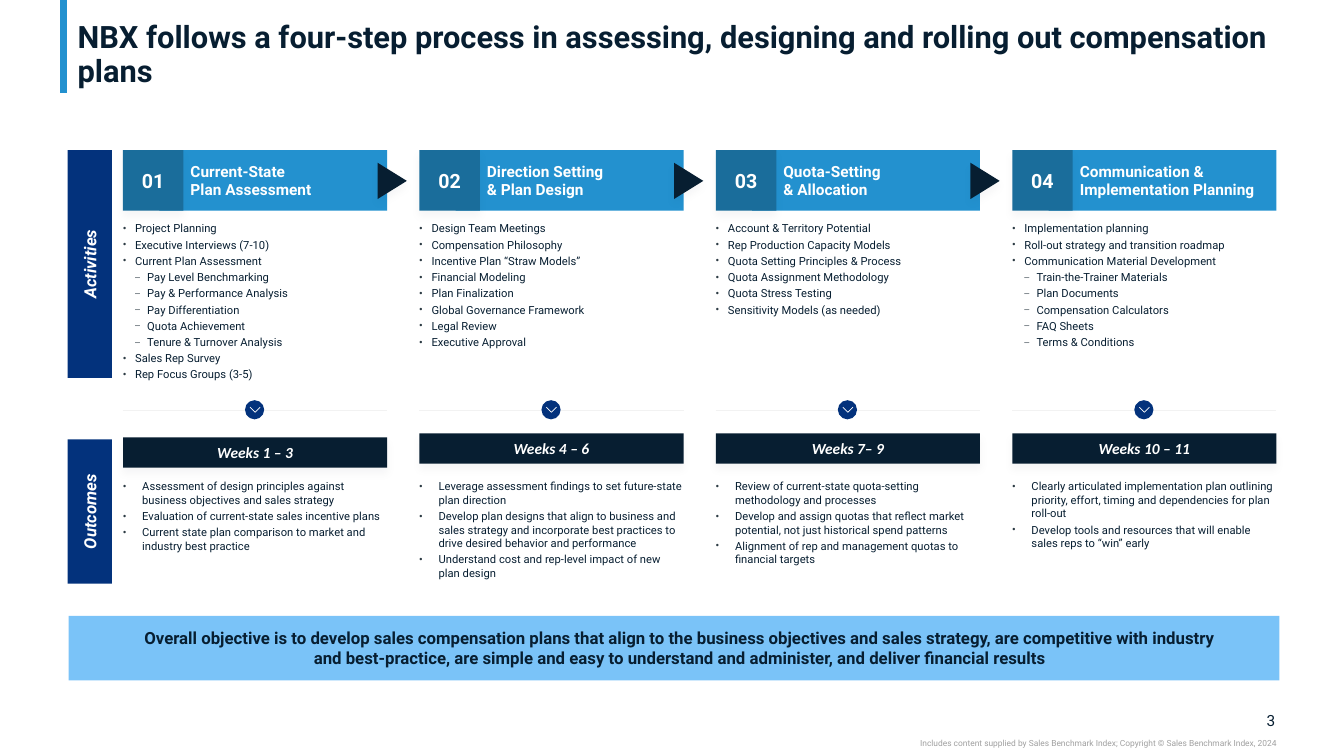
from lxml import etree
from pptx import Presentation
from pptx.dml.color import RGBColor
from pptx.enum.shapes import MSO_CONNECTOR, MSO_SHAPE
from pptx.enum.text import MSO_ANCHOR, MSO_AUTO_SIZE, PP_ALIGN
from pptx.oxml.ns import qn
from pptx.util import Inches, Pt

RECT, OVAL, WEDGE = MSO_SHAPE.RECTANGLE, MSO_SHAPE.OVAL, MSO_SHAPE.ISOSCELES_TRIANGLE
LINE = MSO_CONNECTOR.STRAIGHT
TOP, MID, BASE = MSO_ANCHOR.TOP, MSO_ANCHOR.MIDDLE, MSO_ANCHOR.BOTTOM
LEFT, MIDST, RIGHT = PP_ALIGN.LEFT, PP_ALIGN.CENTER, PP_ALIGN.RIGHT
FIXED = MSO_AUTO_SIZE.NONE

INK = RGBColor(0x07, 0x1E, 0x31)
NAVY = RGBColor(0x03, 0x32, 0x7C)
BLUE = RGBColor(0x23, 0x91, 0xCF)
TEAL = RGBColor(0x1A, 0x6D, 0x9B)
SKY = RGBColor(0x7A, 0xC3, 0xF8)
PALE = RGBColor(0xF2, 0xF2, 0xF2)
GRAY = RGBColor(0xA0, 0xA0, 0xA0)
WHITE = RGBColor(0xFF, 0xFF, 0xFF)
DOT = RGBColor(0x2D, 0x3B, 0x44)

WIDE, HIGH = 13.33, 7.5
EDGE, STEP, SPAN = 1.22, 2.94, 2.62
HEAD, TILE = 1.49, 0.6
LIST, RULE, WEEK, GOAL = 2.2, 4.07, 4.3, 4.76
RAIL, BAR = 0.67, 0.44

STEPS = [
    ("Current-State", "Plan Assessment", "Weeks 1 – 3", 0.04,
     ["Project Planning", "Executive Interviews (7-10)", "Current Plan Assessment",
      ("Pay Level Benchmarking", "Pay & Performance Analysis", "Pay Differentiation",
       "Quota Achievement", "Tenure & Turnover Analysis"),
      "Sales Rep Survey", "Rep Focus Groups (3-5)"],
     ["Assessment of design principles against business objectives and sales strategy",
      "Evaluation of current-state sales incentive plans",
      "Current state plan comparison to market and industry best practice"]),
    ("Direction Setting", "& Plan Design", "Weeks 4 – 6", 0,
     ["Design Team Meetings", "Compensation Philosophy", "Incentive Plan “Straw Models”",
      "Financial Modeling", "Plan Finalization", "Global Governance Framework",
      "Legal Review", "Executive Approval"],
     ["Leverage assessment findings to set future-state plan direction",
      "Develop plan designs that align to business and sales strategy and incorporate "
      "best practices to drive desired behavior and performance",
      "Understand cost and rep-level impact of new plan design"]),
    ("Quota-Setting", "& Allocation", "Weeks 7– 9", 0,
     ["Account & Territory Potential", "Rep Production Capacity Models",
      "Quota Setting Principles & Process", "Quota Assignment Methodology",
      "Quota Stress Testing", "Sensitivity Models (as needed)"],
     ["Review of current-state quota-setting methodology and processes",
      "Develop and assign quotas that reflect market potential, not just historical "
      "spend patterns",
      "Alignment of rep and management quotas to financial targets"]),
    ("Communication &", "Implementation Planning", "Weeks 10 – 11", 0,
     ["Implementation planning", "Roll-out strategy and transition roadmap",
      "Communication Material Development",
      ("Train-the-Trainer Materials", "Plan Documents", "Compensation Calculators",
       "FAQ Sheets", "Terms & Conditions")],
     ["Clearly articulated implementation plan outlining priority, effort, timing and "
      "dependencies for plan roll-out",
      "Develop tools and resources that will enable sales reps to “win” early"]),
]


def node(parent, tag, **attrs):
    return etree.SubElement(parent, qn(tag), {k: str(v) for k, v in attrs.items()})


def shade(shape):
    glow = node(shape._element.spPr.find(qn("a:effectLst")), "a:outerShdw",
                blurRad=Pt(6), dist=Pt(4), dir=5400000, algn="t", rotWithShape=0)
    node(node(glow, "a:srgbClr", val=INK), "a:alpha", val=4000)


def block(shapes, kind, x, y, w, h, fill, cast=False):
    shape = shapes.add_shape(kind, Inches(x), Inches(y), Inches(w), Inches(h))
    shape.fill.solid()
    shape.fill.fore_color.rgb = fill
    shape.line.fill.background()
    shape.shadow.inherit = False
    if cast:
        shade(shape)
    return shape


def line(shapes, x1, y1, x2, y2, color, size):
    rule = shapes.add_connector(LINE, Inches(x1), Inches(y1), Inches(x2), Inches(y2))
    rule.line.color.rgb = color
    rule.line.width = Pt(size)
    node(rule._element.spPr, "a:effectLst")


def frame(shape, anchor=MID, inset=(0, 0, 0, 0), wrap=True):
    body = shape.text_frame
    body.auto_size = FIXED
    body.word_wrap = wrap
    body.vertical_anchor = anchor
    (body.margin_left, body.margin_top,
     body.margin_right, body.margin_bottom) = map(Inches, inset)
    return body


def label(shapes, x, y, w, h, anchor=TOP, wrap=True):
    box = shapes.add_textbox(Inches(x), Inches(y), Inches(w), Inches(h))
    return box, frame(box, anchor, wrap=wrap)


def write(para, text, size, color=INK, bold=False, slant=False, face="Roboto"):
    run = para.add_run()
    run.text = text
    font = run.font
    font.name, font.size, font.bold, font.italic = face, Pt(size), bold, slant
    font.color.rgb = color


def fresh(body, first, align=LEFT):
    para = body.paragraphs[0] if first else body.add_paragraph()
    para.alignment = align
    return para


def list_box(shapes, x, y, h, items, hang):
    body = label(shapes, x, y, SPAN, h)[1]
    rows = []
    for item in items:
        rows += [(2, sub) for sub in item] if isinstance(item, tuple) else [(1, item)]
    for i, (depth, text) in enumerate(rows):
        para = fresh(body, i == 0)
        para.space_after = Pt(2)
        props = para._p.get_or_add_pPr()
        props.set("marL", str(Inches(hang * depth)))
        props.set("indent", str(-Inches(hang)))
        node(node(props, "a:buClr"), "a:srgbClr", val=DOT)
        node(props, "a:buSzPct", val=80000)
        node(props, "a:buFont", typeface="Arial")
        node(props, "a:buChar", char="•" if depth == 1 else "–")
        write(para, text, 8)


def rail(shapes, y, h, text):
    block(shapes, RECT, RAIL, y, BAR, h, NAVY)
    box, body = label(shapes, RAIL + BAR / 2 - 0.5, y + h / 2 - 0.15, 1, 0.3, MID, False)
    box.rotation = 270
    write(fresh(body, True, MIDST), text, 12, WHITE, True, True)


def header(shapes, x, num, upper, lower):
    band = block(shapes, RECT, x + 0.36, HEAD, SPAN - 0.36, TILE, BLUE)
    para = fresh(frame(band, MID, (0.31, 0.04, 0.04, 0.04)), True)
    write(para, upper, 11, WHITE, True)
    para.add_line_break()
    write(para, lower, 11, WHITE, True)
    tile = block(shapes, RECT, x, HEAD, TILE, TILE, TEAL, True)
    write(fresh(frame(tile), True, MIDST), f"{num:02}", 14, WHITE, True)


def split(shapes, x):
    group = shapes.add_group_shape().shapes
    mid = x + SPAN / 2
    line(group, x, RULE, x + SPAN, RULE, PALE, 0.5)
    block(group, OVAL, mid - 0.1, RULE - 0.1, 0.19, 0.19, NAVY)
    for side in (-0.05, 0.05):
        line(group, mid + side, RULE - 0.03, mid, RULE + 0.02, WHITE, 0.5)


def title(slide, text):
    head = slide.shapes.title
    head.left, head.top = Inches(RAIL), Inches(0.04)
    head.width, head.height = Inches(0.9 * WIDE), Inches(0.84)
    para = fresh(frame(head, BASE, (0.1, 0, 0.1, 0)), True)
    para.line_spacing = 0.9
    write(para, text, 22, INK, True)


def banner(shapes, rows):
    body = frame(block(shapes, RECT, 0.68, 6.11, 12.01, 0.64, SKY), MID, (0.1, 0.05, 0.1, 0.05))
    for i, text in enumerate(rows):
        para = fresh(body, i == 0, MIDST)
        para._p.get_or_add_pPr().set("marL", str(Inches(0.12)))
        write(para, text, 12, INK, True)


def footer(shapes):
    num = label(shapes, 12.32, 7.05, 0.33, 0.19, MID)[1]
    write(fresh(num, True, RIGHT), "3", 11)
    note = label(shapes, 7.5, 7.32, 5.16, 0.1)[1]
    write(fresh(note, True, RIGHT), "Includes content supplied by Sales Benchmark Index; "
          "Copyright © Sales Benchmark Index, 2024", 6, GRAY)


def main():
    deck = Presentation()
    deck.slide_width, deck.slide_height = Inches(WIDE), Inches(HIGH)
    slide = deck.slides.add_slide(deck.slide_layouts[5])
    shapes = slide.shapes
    line(shapes, 0.63, 0, 0.63, 0.92, BLUE, 5)
    title(slide, "NBX follows a four-step process in assessing, designing and "
          "rolling out compensation plans")
    rail(shapes, HEAD, 2.26, "Activities")
    rail(shapes, 4.36, 1.43, "Outcomes")
    for i, (upper, lower, weeks, drop, acts, goals) in enumerate(STEPS):
        x = EDGE + i * STEP
        header(shapes, x, i + 1, upper, lower)
        list_box(shapes, x, LIST, 1.6, acts, 0.12)
        split(shapes, x)
        strip = block(shapes, RECT, x, WEEK + drop, SPAN, 0.3, INK, True)
        write(fresh(frame(strip), True, MIDST), weeks, 11, WHITE, True, True, "Calibri")
        list_box(shapes, x, GOAL, 1.03, goals, 0.19)
        if i < len(STEPS) - 1:
            wedge = block(shapes, WEDGE, x + 2.49, 1.65, 0.36, 0.29, INK, True)
            wedge.rotation = 90
    banner(shapes, [
        "Overall objective is to develop sales compensation plans that align to the business "
        "objectives and sales strategy, are competitive with industry",
        "and best-practice, are simple and easy to understand and administer, and deliver "
        "financial results"])
    footer(shapes)
    deck.save("out.pptx")


if __name__ == "__main__":
    main()
